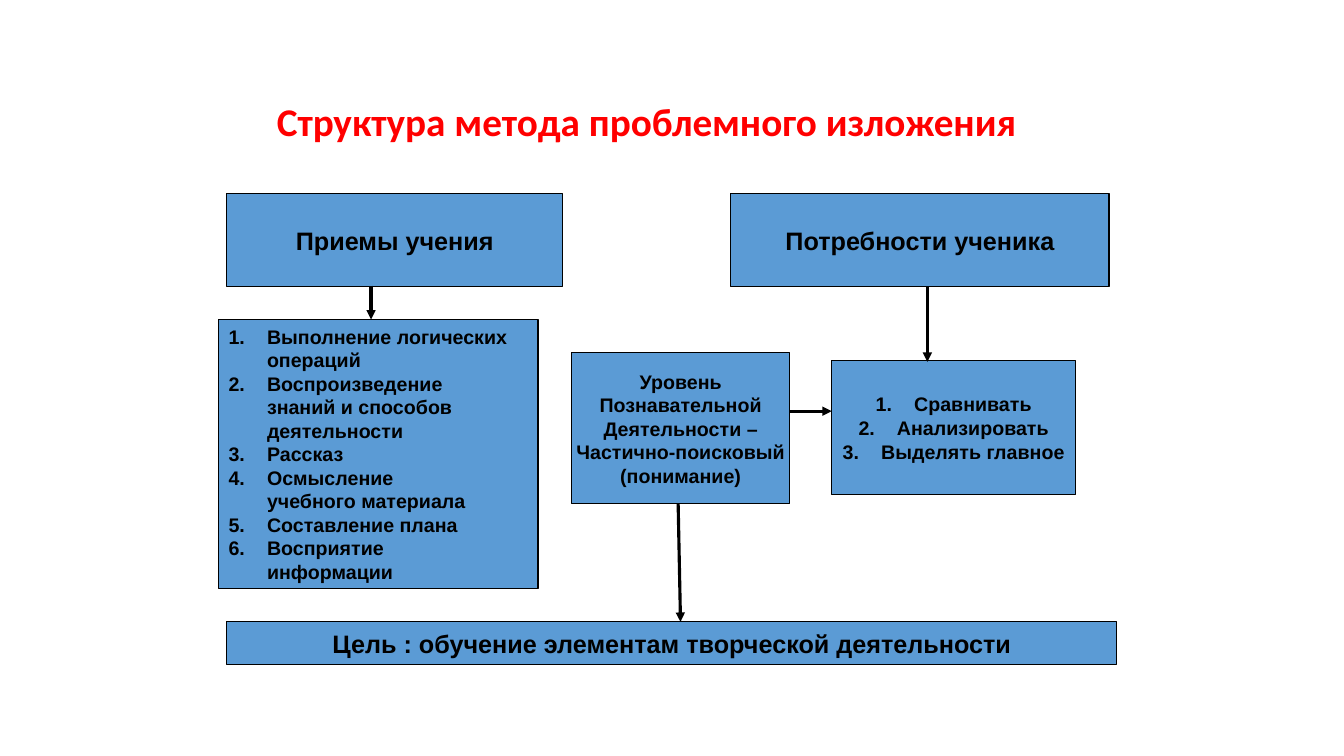
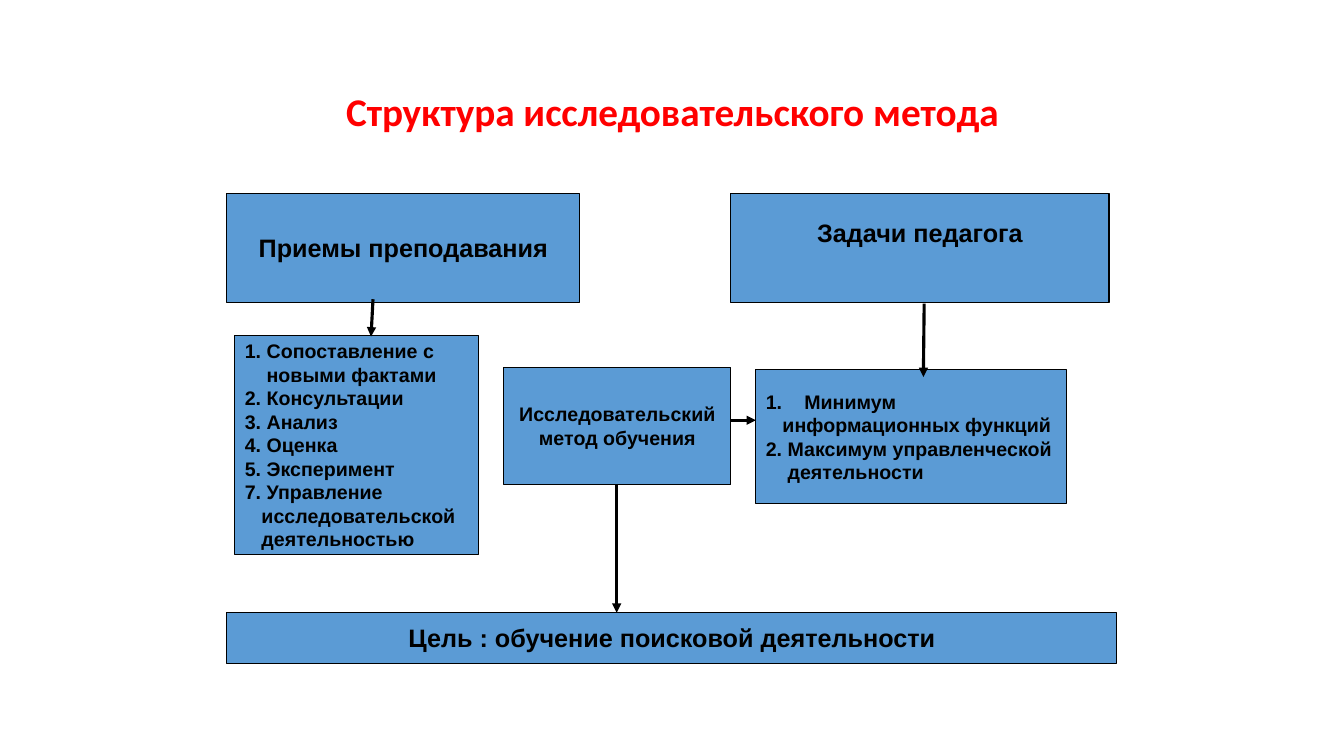
from copy import deepcopy
from dataclasses import dataclass
from typing import NamedTuple

from pptx import Presentation
from pptx.dml.color import RGBColor
from pptx.enum.shapes import MSO_CONNECTOR as Conn, MSO_SHAPE as Shape
from pptx.enum.text import MSO_ANCHOR as Anchor, PP_ALIGN as Align
from pptx.oxml.ns import qn
from pptx.oxml.xmlchemy import OxmlElement
from pptx.util import Cm, Pt

# Shared style
RED, BLUE, BLACK = "FF0000", "5B9BD5", "000000"
TITLE_FONT, BODY_FONT = "Calibri", "Arial"
TITLE_SIZE, HEAD_SIZE, BODY_SIZE = 28, 18, 14
HANG, NARROW, TIGHT = 0.97, 0.55, 0.42

# Shared layout, in cm
LEFT, RIGHT, TOP = 5.72, 18.42, 4.88
RIGHT_W, GOAL_W = 9.53, 22.43


class Line(NamedTuple):
    text: str
    start: int = 0  # first number of its list; 0 means not numbered
    indent: float = 0


class Arrow(NamedTuple):
    x1: float
    y1: float
    x2: float
    y2: float


@dataclass
class Box:
    x: float
    y: float
    w: float
    h: float
    lines: list[Line]
    size: int = BODY_SIZE
    align: Align = Align.CENTER
    bottom: float = 0.13


@dataclass
class Title:
    x: float
    y: float
    w: float
    text: str
    align: Align


@dataclass
class Scheme:
    title: Title
    boxes: list[Box]
    arrows: list[Arrow]


def rgb(colour: str) -> RGBColor:
    return RGBColor.from_string(colour)


def lines(*texts: str, start: int = 0, indent: float = 0) -> list[Line]:
    return [Line(text, start, indent) for text in texts]


def heading(x: float, y: float, w: float, h: float, text: str,
            bottom: float = 0.13) -> Box:
    return Box(x, y, w, h, lines(text), HEAD_SIZE, bottom=bottom)


def format_runs(p, font: str, size: int, colour: str) -> None:
    for r in p.runs:
        r.font.name, r.font.size, r.font.bold = font, Pt(size), True
        r.font.color.rgb = rgb(colour)
    for br in p._p.findall(qn("a:br")):
        br.append(deepcopy(p.runs[0]._r.rPr))


def set_indent(p, line: Line) -> None:
    pPr = p._p.get_or_add_pPr()
    pPr.set("marL", str(Cm(line.indent)))
    if line.start:
        pPr.set("indent", str(-Cm(line.indent)))
        number = OxmlElement("a:buAutoNum")
        number.set("type", "arabicPeriod")
        number.set("startAt", str(line.start))
        pPr.append(number)


def draw_title(s, title: Title) -> None:
    sp = s.shapes.add_textbox(Cm(title.x), Cm(title.y), Cm(title.w), Cm(3.68))
    tf = sp.text_frame
    tf.word_wrap, tf.vertical_anchor = True, Anchor.MIDDLE
    tf.text = title.text
    p = tf.paragraphs[0]
    p.alignment, p.line_spacing = title.align, 0.9
    format_runs(p, TITLE_FONT, TITLE_SIZE, RED)


def draw_box(s, box: Box) -> None:
    sp = s.shapes.add_shape(Shape.RECTANGLE, Cm(box.x), Cm(box.y),
                            Cm(box.w), Cm(box.h))
    sp.shadow.inherit = False
    sp.fill.solid()
    sp.fill.fore_color.rgb = rgb(BLUE)
    sp.line.color.rgb = rgb(BLACK)
    sp.line.width = Pt(0.75)
    tf = sp.text_frame
    tf.word_wrap, tf.vertical_anchor = False, Anchor.MIDDLE
    tf.margin_bottom = Cm(box.bottom)
    tf.text = "\n".join(line.text for line in box.lines)
    for p, line in zip(tf.paragraphs, box.lines):
        p.alignment = box.align
        set_indent(p, line)
        format_runs(p, BODY_FONT, box.size, BLACK)


def draw_arrow(s, arrow: Arrow) -> None:
    sp = s.shapes.add_connector(Conn.STRAIGHT, *map(Cm, arrow))
    sp.line.color.rgb = rgb(BLACK)
    sp.line.width = Pt(2.25)
    tail = OxmlElement("a:tailEnd")
    tail.set("type", "triangle")
    sp.line._get_or_add_ln().append(tail)
    sp._element.spPr.append(OxmlElement("a:effectLst"))


def draw_scheme(prs, scheme: Scheme) -> None:
    s = prs.slides.add_slide(prs.slide_layouts[6])
    draw_title(s, scheme.title)
    for box in scheme.boxes:
        draw_box(s, box)
    for arrow in scheme.arrows:
        draw_arrow(s, arrow)


SCHEMES = [
    # Problem presentation
    Scheme(
        Title(6.73, 1.27, 20.37, "Структура метода проблемного изложения",
              Align.LEFT),
        [
            heading(LEFT, TOP, 8.46, 2.34, "Приемы учения"),
            heading(RIGHT, TOP, RIGHT_W, 2.34, "Потребности ученика"),
            Box(5.51, 8.05, 8.05, 6.78, lines(
                "Выполнение логических\vопераций",
                "Воспроизведение\vзнаний и способов\vдеятельности",
                "Рассказ",
                "Осмысление\vучебного материала",
                "Составление плана",
                "Восприятие\vинформации",
                start=1, indent=HANG), align=Align.LEFT),
            Box(14.4, 8.89, 5.51, 3.81, lines(
                "Уровень", "Познавательной", "Деятельности –",
                "Частично-поисковый", "(понимание)")),
            Box(20.96, 9.09, 6.15, 3.38, lines(
                "Сравнивать", "Анализировать", "Выделять главное",
                start=1, indent=HANG)),
            heading(LEFT, 15.67, GOAL_W, 1.07,
                    "Цель : обучение элементам творческой деятельности"),
        ],
        [
            Arrow(9.35, 7.2, 9.35, 8.05),
            Arrow(23.37, 7.21, 23.37, 9.12),
            Arrow(17.09, 12.7, 17.15, 15.67),
            Arrow(19.89, 10.36, 20.96, 10.36),
        ],
    ),
    # Research method
    Scheme(
        Title(2.34, 1.02, 29.21, "Структура исследовательского метода",
              Align.CENTER),
        [
            heading(LEFT, TOP, 8.89, 2.74, "Приемы преподавания"),
            heading(RIGHT, TOP, RIGHT_W, 2.74, "Задачи педагога", bottom=0.89),
            Box(5.92, 8.46, 6.15, 5.51, [
                *lines("Сопоставление с\vновыми фактами", "Консультации",
                       "Анализ", "Оценка", "Эксперимент",
                       start=1, indent=NARROW),
                Line("Управление", 7, NARROW),
                *lines("исследовательской", "деятельностью", indent=TIGHT),
            ], align=Align.LEFT),
            Box(19.05, 9.32, 7.82, 3.38, [
                Line("Минимум", 1, HANG),
                Line("информационных функций", indent=TIGHT),
                Line("Максимум управленческой\vдеятельности", 2, NARROW),
            ], align=Align.LEFT),
            Box(12.7, 9.25, 5.72, 2.97,
                lines("Исследовательский", "метод обучения")),
            heading(LEFT, 15.44, GOAL_W, 1.27,
                    "Цель : обучение поисковой деятельности"),
        ],
        [
            Arrow(9.4, 7.54, 9.35, 8.48),
            Arrow(15.54, 12.19, 15.54, 15.44),
            Arrow(23.29, 7.65, 23.27, 9.5),
            Arrow(18.42, 10.59, 19.05, 10.59),
        ],
    ),
]


def main() -> None:
    prs = Presentation()
    prs.slide_width, prs.slide_height = Cm(33.87), Cm(19.05)
    for scheme in SCHEMES:
        draw_scheme(prs, scheme)
    prs.save("out.pptx")


if __name__ == "__main__":
    main()
